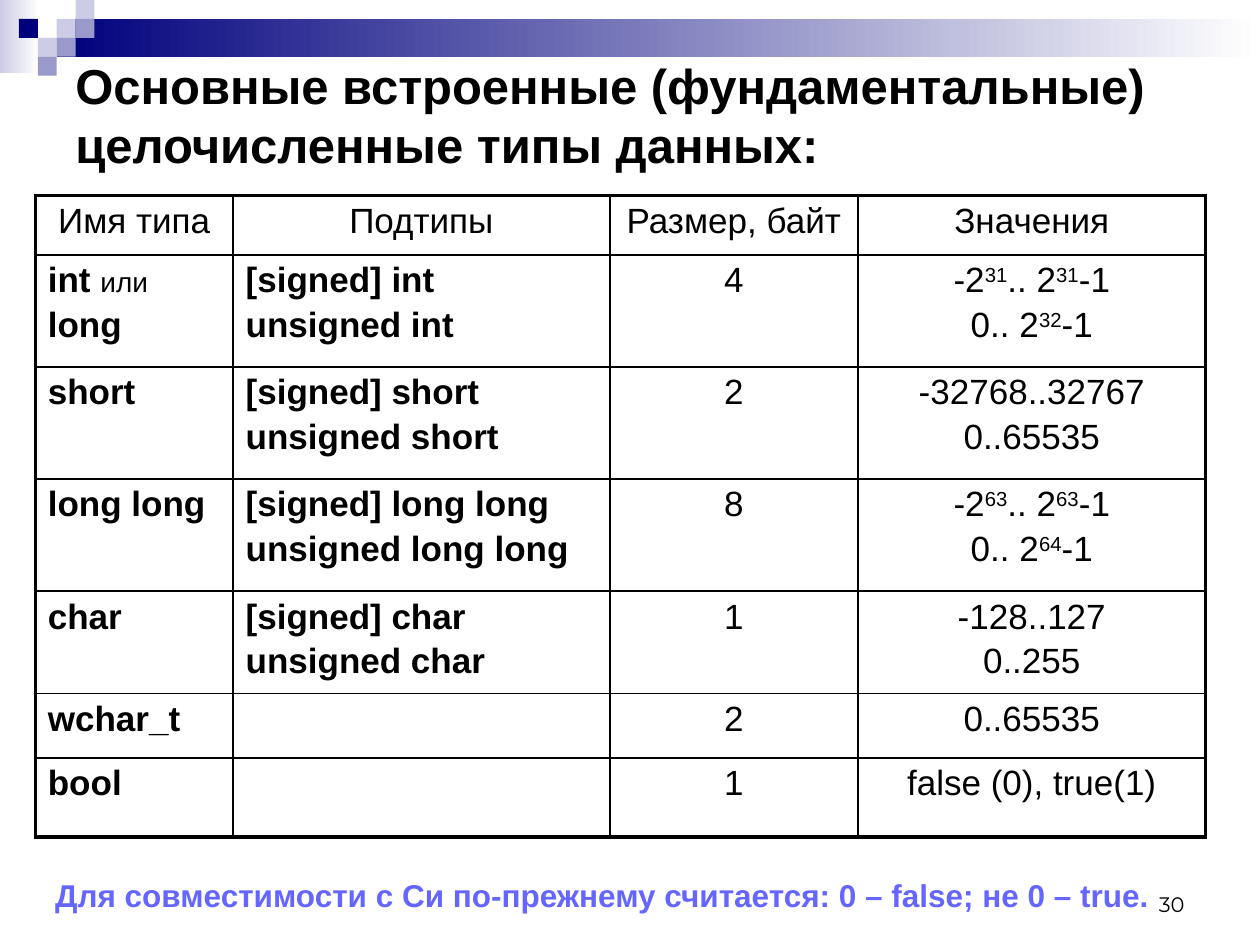
"""Builds the slide listing the fundamental integer types."""
from dataclasses import dataclass
from typing import NamedTuple

from lxml import etree
from pptx import Presentation
from pptx import util as u
from pptx.dml.color import RGBColor
from pptx.enum import shapes, text
from pptx.oxml import ns


@dataclass(frozen=True)
class Theme:
    navy: str = "00007D"
    lilac: str = "9999CC"
    pale: str = "CCCCE6"
    white: str = "FFFFFF"
    ink: str = "000000"
    accent: str = "6565FF"
    font: str = "Arial"
    number_font: str = "Montserrat"
    title: float = 28
    body: float = 20
    note: float = 18
    small: float = 16
    number: float = 12
    gap: float = 3.3
    thin: float = 1
    thick: float = 2.25


class Area(NamedTuple):
    left: float
    top: float
    width: float
    height: float


class Tile(NamedTuple):
    column: int
    row: int
    color: str


class Band(NamedTuple):
    area: Area
    color: str


class Label(NamedTuple):
    area: Area
    words: str
    font: dict
    align: text.PP_ALIGN
    anchor: text.MSO_ANCHOR


class TypeRow(NamedTuple):
    height: float
    cells: tuple


THEME = Theme()
WIDTH, HEIGHT, UNIT = 10, 7.5, 0.15
LEFT, CENTER, RIGHT = text.PP_ALIGN.LEFT, text.PP_ALIGN.CENTER, text.PP_ALIGN.RIGHT

BANDS = (
    Band(Area(0, 0, 0.031, 0.077), THEME.pale),
    Band(Area(0.045, 0.02, 0.955, 0.04), THEME.navy),
)
TILES = (
    Tile(3, 1, THEME.pale), Tile(4, 0, THEME.pale), Tile(4, 1, THEME.lilac),
    Tile(2, 2, THEME.pale), Tile(1, 1, THEME.navy), Tile(3, 2, THEME.lilac),
    Tile(2, 3, THEME.lilac),
)
LABELS = (
    Label(Area(0.717, 0.91, 0.233, 0.067), "30",
          dict(name=THEME.number_font, size=THEME.number, color=THEME.ink),
          RIGHT, text.MSO_ANCHOR.BOTTOM),
    Label(Area(0.05, 0.067, 0.95, 0.108),
          "Основные встроенные (фундаментальные) целочисленные типы данных:",
          dict(size=THEME.title, color=THEME.ink, bold=True),
          LEFT, text.MSO_ANCHOR.MIDDLE),
    Label(Area(0.034, 0.92, 0.93, 0.053),
          "Для совместимости с Си по-прежнему считается: 0 – false; не 0 – true.",
          dict(size=THEME.note, color=THEME.accent, bold=True),
          LEFT, text.MSO_ANCHOR.TOP),
)
TABLE_AREA = Area(0.028, 0.207, 0.929, 0.68)
COLUMNS = (1.57, 2.99, 1.97, 2.76)
ROWS = (
    TypeRow(0.47, ("Имя типа", "Подтипы", "Размер, байт", "Значения")),
    TypeRow(0.89, ("int ~или~\nlong", "[signed] int\nunsigned int", "4",
                   "-2^31^.. 2^31^-1\n0.. 2^32^-1")),
    TypeRow(0.89, ("short", "[signed] short\nunsigned short", "2",
                   "-32768..32767\n0..65535")),
    TypeRow(0.89, ("long long", "[signed] long long\nunsigned long long", "8",
                   "-2^63^.. 2^63^-1\n0.. 2^64^-1")),
    TypeRow(0.77, ("char", "[signed] char\nunsigned char", "1", "-128..127\n0..255")),
    TypeRow(0.51, ("wchar_t", "", "2", "0..65535")),
    TypeRow(0.63, ("bool", "", "1", "false (0), true(1)")),
)


def place(area: Area) -> list:
    """Turn shares of the slide into lengths."""
    scale = (WIDTH, HEIGHT, WIDTH, HEIGHT)
    return [u.Inches(share * side) for share, side in zip(area, scale)]


def add_span(para, words: str, values: dict):
    """Add a run and set its font from the given values."""
    span = para.add_run()
    span.text = words
    for name, value in {"name": THEME.font, "bold": False, **values}.items():
        if name == "color":
            span.font.color.rgb = RGBColor.from_string(value)
        else:
            setattr(span.font, name, u.Pt(value) if name == "size" else value)
    return span


def add_block(page, lengths: list):
    """Add a rectangle without line or shadow."""
    box = page.shapes.add_shape(shapes.MSO_SHAPE.RECTANGLE, *lengths)
    box.shadow.inherit = False
    box.line.fill.background()
    return box


def add_band(page, band: Band) -> None:
    """Add a rectangle that fades to white on the right."""
    fill = add_block(page, place(band.area)).fill
    fill.gradient()
    fill.gradient_angle = 0
    for stop, position, color in zip(fill.gradient_stops, (0, 1), (band.color, THEME.white)):
        stop.position = position
        stop.color.rgb = RGBColor.from_string(color)


def add_tile(page, tile: Tile) -> None:
    """Add one square of the corner mosaic."""
    spots = (tile.column, tile.row, 1, 1)
    fill = add_block(page, [u.Inches(spot * UNIT) for spot in spots]).fill
    fill.solid()
    fill.fore_color.rgb = RGBColor.from_string(tile.color)


def add_label(page, label: Label) -> None:
    """Add a wrapped text box."""
    frame = page.shapes.add_textbox(*place(label.area)).text_frame
    frame.word_wrap = True
    frame.vertical_anchor = label.anchor
    para = frame.paragraphs[0]
    para.alignment = label.align
    add_span(para, label.words, label.font)


def set_borders(cell, widths: dict) -> None:
    """Draw the four sides of a cell."""
    props = cell._tc.get_or_add_tcPr()
    for side, width in widths.items():
        line = etree.SubElement(props, ns.qn(f"a:ln{side}"), w=str(u.Pt(width)))
        fill = etree.SubElement(line, ns.qn("a:solidFill"))
        etree.SubElement(fill, ns.qn("a:srgbClr"), val=THEME.ink)


def fill_cell(cell, words: str, bold: bool, align: text.PP_ALIGN) -> None:
    """Write a cell, reading ^ as superscript and ~ as small print."""
    for index, line in enumerate(words.split("\n")):
        para = cell.text_frame.paragraphs[0] if index == 0 else cell.text_frame.add_paragraph()
        para.alignment = align
        if index:
            para.space_before = u.Pt(THEME.gap)
        mark = "~" if "~" in line else "^"
        for order, part in enumerate(line.split(mark)):
            if not part:
                continue
            small = order % 2 == 1 and mark == "~"
            span = add_span(para, part, dict(
                size=THEME.small if small else THEME.body,
                color=THEME.ink, bold=bold and not small))
            if order % 2 == 1 and mark == "^":
                span.font._element.set("baseline", "30000")


def add_type_table(page) -> None:
    """Add the table of integer types."""
    table = page.shapes.add_table(len(ROWS), len(COLUMNS), *place(TABLE_AREA)).table
    for name in ("first_row", "horz_banding"):
        setattr(table, name, False)
    for column, width in zip(table.columns, COLUMNS):
        column.width = u.Inches(width)
    last_row, last_column = len(ROWS) - 1, len(COLUMNS) - 1
    for r, row in enumerate(ROWS):
        table.rows[r].height = u.Inches(row.height)
        for c, words in enumerate(row.cells):
            cell = table.cell(r, c)
            edges = {"L": c == 0, "R": c == last_column, "T": r == 0, "B": r == last_row}
            set_borders(cell, {side: THEME.thick if outer else THEME.thin
                               for side, outer in edges.items()})
            cell.fill.background()
            named = r > 0 and c < 2
            fill_cell(cell, words, named, LEFT if named else CENTER)


def main() -> None:
    """Build and save the deck."""
    deck = Presentation()
    deck.slide_width, deck.slide_height = u.Inches(WIDTH), u.Inches(HEIGHT)
    page = deck.slides.add_slide(deck.slide_layouts[6])
    for draw, items in ((add_band, BANDS), (add_tile, TILES), (add_label, LABELS)):
        for item in items:
            draw(page, item)
    add_type_table(page)
    deck.save("out.pptx")


if __name__ == "__main__":
    main()
